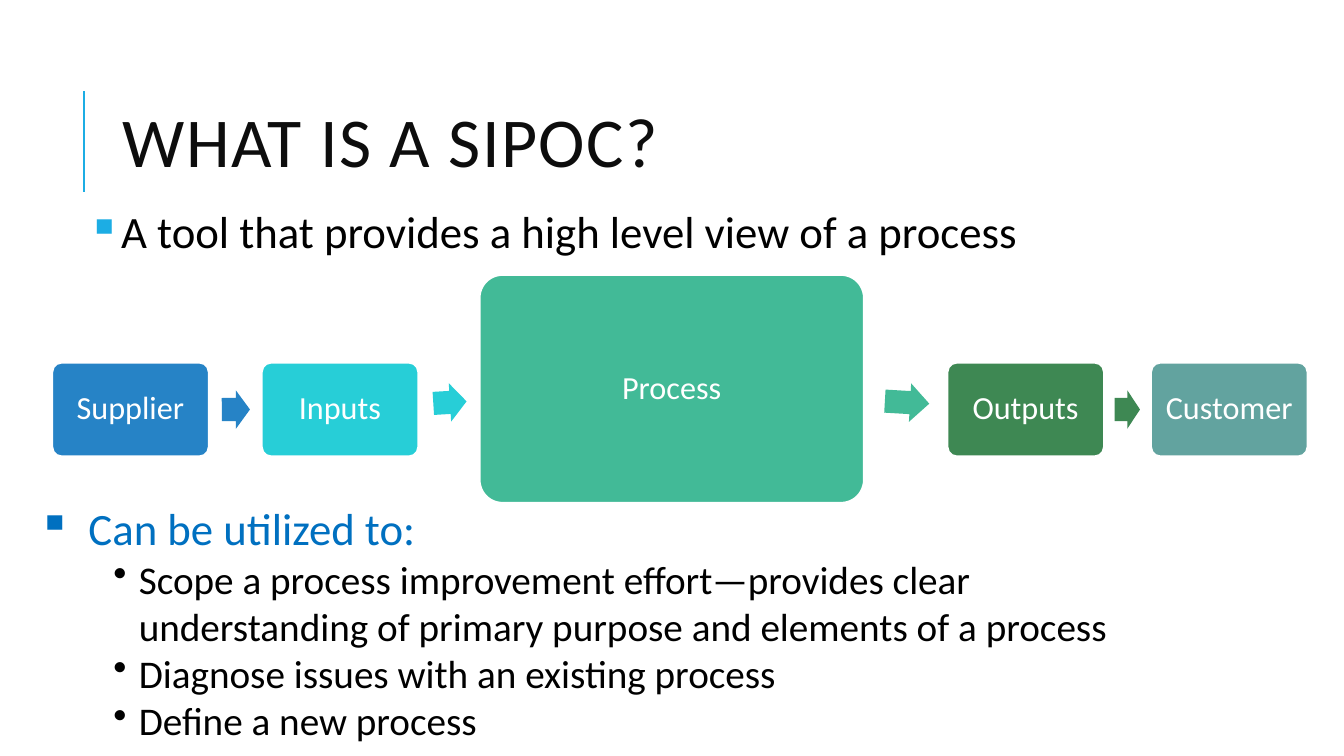
from lxml import etree
from pptx import Presentation
from pptx.dml.color import RGBColor
from pptx.enum.shapes import MSO_CONNECTOR, MSO_SHAPE
from pptx.enum.text import MSO_ANCHOR, MSO_AUTO_SIZE, PP_ALIGN
from pptx.oxml.ns import qn
from pptx.util import Cm, Pt

LEFT, CENTER = PP_ALIGN.LEFT, PP_ALIGN.CENTER
TOP, MIDDLE = MSO_ANCHOR.TOP, MSO_ANCHOR.MIDDLE
NO_FIT = MSO_AUTO_SIZE.NONE
ROUND, ARROW = MSO_SHAPE.ROUNDED_RECTANGLE, MSO_SHAPE.RIGHT_ARROW
STRAIGHT = MSO_CONNECTOR.STRAIGHT


class Theme:
    font = "Calibri"
    title, head, item, label = 50, 32, 28, 23
    ink, black, white = "0D0D0D", "000000", "FFFFFF"
    accent, link = "1CADE4", "0070C0"
    blue, cyan, mint = "2683C6", "27CED7", "42BA97"
    green, teal = "3E8853", "62A39F"


def color(code):
    return RGBColor.from_string(code)


def assign(target, values):
    for name, value in values.items():
        setattr(target, name, value)


class Deck:
    def __init__(self, theme):
        self.theme = theme
        self.file = Presentation()
        assign(self.file, {"slide_width": Cm(33.87), "slide_height": Cm(19.05)})
        self.slide = self.file.slides.add_slide(self.file.slide_layouts[5])
        self.shapes = self.slide.shapes

    def frame(self, shape, inset=(0.25, 0.13), anchor=TOP):
        side, edge = map(Cm, inset)
        frame = shape.text_frame
        assign(frame, {
            "word_wrap": True, "auto_size": NO_FIT, "vertical_anchor": anchor,
            "margin_left": side, "margin_right": side,
            "margin_top": edge, "margin_bottom": edge,
        })
        return frame

    def phrase(self, para, text, size, ink, **form):
        """Fill a paragraph with one run and set its paragraph format."""
        assign(para, {"alignment": LEFT, **form})
        run = para.add_run()
        run.text = text
        assign(run.font, {"name": self.theme.font, "size": Pt(size)})
        run.font.color.rgb = color(ink)
        return run

    def bullet(self, para, mark, ink, margin, indent):
        props = para._p.get_or_add_pPr()
        props.set("marL", str(Cm(margin)))
        props.set("indent", str(Cm(indent)))
        tint = etree.SubElement(props, qn("a:buClr"))
        etree.SubElement(tint, qn("a:srgbClr"), val=ink)
        etree.SubElement(props, qn("a:buChar"), char=mark)

    def title(self, text, *place):
        shape = self.shapes.title
        assign(shape, dict(zip(("left", "top", "width", "height"), map(Cm, place))))
        para = self.frame(shape, anchor=MIDDLE).paragraphs[0]
        run = self.phrase(para, text, self.theme.title, self.theme.ink,
                          line_spacing=0.8)
        run.font._element.set("spc", "100")

    def rule(self, x, top, end):
        line = self.shapes.add_connector(STRAIGHT, *map(Cm, (x, end, x, top)))
        line.line.color.rgb = color(self.theme.accent)
        line.line.width = Pt(1.5)
        etree.SubElement(line._element.spPr, qn("a:effectLst"))

    def text(self, *place, inset=(0.25, 0.13)):
        return self.frame(self.shapes.add_textbox(*map(Cm, place)), inset)

    def solid(self, kind, place, fill, *adjust):
        shape = self.shapes.add_shape(kind, *map(Cm, place))
        shape.shadow.inherit = False
        shape.fill.solid()
        shape.fill.fore_color.rgb = color(fill)
        shape.line.fill.background()
        for index, value in enumerate(adjust):
            shape.adjustments[index] = value
        return shape

    def box(self, text, x, mid, width, height, fill):
        shape = self.solid(ROUND, (x, mid - height / 2, width, height), fill, 0.1)
        shape.line.color.rgb = color(self.theme.white)
        shape.line.width = Pt(1.25)
        para = self.frame(shape, (0.25, 0.25), MIDDLE).paragraphs[0]
        self.phrase(para, text, self.theme.label, self.theme.white,
                    alignment=CENTER, line_spacing=0.9)

    def arrow(self, x, mid, width, turn, fill):
        height = 0.97
        shape = self.solid(ARROW, (x, mid - height / 2, width, height), fill, 0.6, 0.5)
        shape.rotation = turn


def main():
    theme = Theme()
    deck = Deck(theme)
    deck.rule(2.11, 2.29, 4.83)
    deck.title("WHAT IS A SIPOC?", 2.84, 1.63, 27, 4.17)

    intro = deck.text(2.08, 5.16, 27, 2.69, inset=(0.13, 0.13)).paragraphs[0]
    deck.phrase(intro, "A tool that provides a high level view of a process",
                theme.head, theme.black, line_spacing=0.9,
                space_before=Pt(12), space_after=Pt(2))
    deck.bullet(intro, "▪", theme.accent, 0.25, -0.25)

    small, large = (10.32, 3.94, 2.36), (9.8, 9.68, 5.74)
    # label, left, (middle, width, height), fill, (left, middle, width, turn) of arrow
    steps = [
        ("Supplier", 1.32, small, theme.blue, (5.59, 10.32, 0.71, -0.2)),
        ("Inputs", 6.6, small, theme.cyan, (10.92, 10.14, 0.84, -3.5)),
        ("Process", 12.09, large, theme.mint, (22.3, 10.14, 1.12, 3.3)),
        ("Outputs", 23.88, small, theme.green, (28.09, 10.32, 0.64, 0)),
        ("Customer", 29.01, small, theme.teal, None),
    ]
    for label, x, size, fill, arrow in steps:
        deck.box(label, x, *size, fill)
        if arrow:
            deck.arrow(*arrow, fill)

    uses = deck.text(0.71, 12.5, 29.13, 6.4)
    head = uses.paragraphs[0]
    deck.phrase(head, "Can be utilized to:", theme.head, theme.link)
    deck.bullet(head, "▪", theme.link, 1.27, -1.27)
    for item in (
        "Scope a process improvement effort—provides clear "
        "understanding of primary purpose and elements of a process",
        "Diagnose issues with an existing process",
        "Define a new process",
    ):
        para = uses.add_paragraph()
        deck.phrase(para, item, theme.item, theme.black, level=1)
        deck.bullet(para, "•", theme.black, 2.54, -0.64)

    deck.file.save("out.pptx")


if __name__ == "__main__":
    main()
